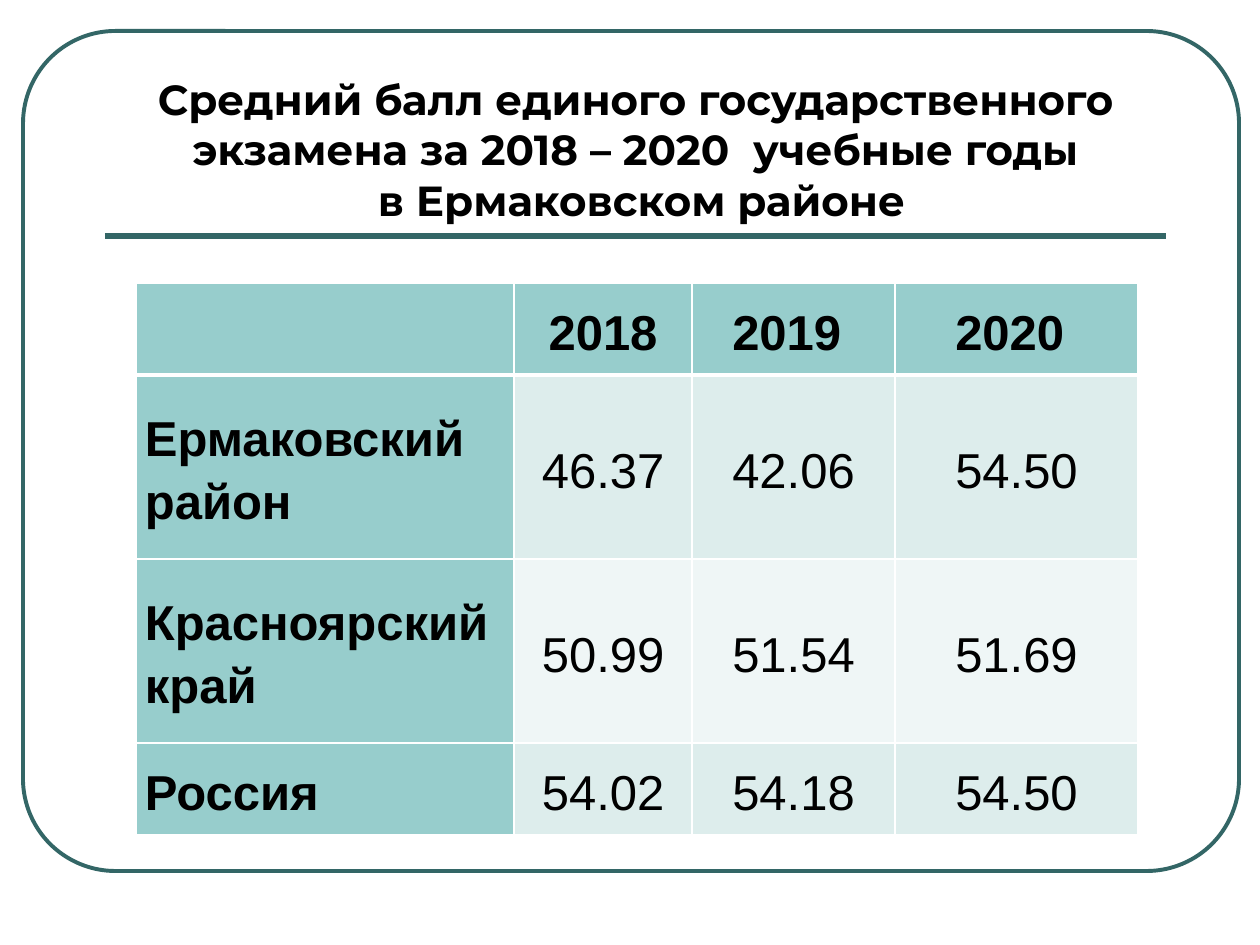
from dataclasses import dataclass

from lxml.etree import SubElement
from pptx import Presentation
from pptx.dml.color import RGBColor
from pptx.enum.shapes import MSO_CONNECTOR, MSO_SHAPE
from pptx.enum.text import MSO_ANCHOR, MSO_AUTO_SIZE, PP_ALIGN
from pptx.oxml.ns import qn
from pptx.util import Emu, Pt

EMU_PER_PX = 914400 / 126

BLACK = RGBColor(0x00, 0x00, 0x00)
WHITE = RGBColor(0xFF, 0xFF, 0xFF)
DARK_TEAL = RGBColor(0x33, 0x66, 0x66)
TEAL = RGBColor(0x97, 0xCD, 0xCC)
LIGHT_BAND = RGBColor(0xDD, 0xED, 0xEC)
PALE_BAND = RGBColor(0xEF, 0xF6, 0xF6)

TITLE = ("Средний балл единого государственного экзамена "
         "за 2018 – 2020  учебные годы\v в Ермаковском районе")
COL_WIDTHS = (378, 178, 203, 243)


@dataclass
class Row:
    label: str
    values: tuple[str, ...]
    height: int
    band: RGBColor
    bold: bool = False


ROWS = (
    Row("", ("2018", "2019 ", "2020 "), 92, TEAL, bold=True),
    Row("Ермаковский район", ("46.37", "42.06", "54.50"), 184, LIGHT_BAND),
    Row("Красноярский край", ("50.99", "51.54", "51.69"), 184, PALE_BAND),
    Row("Россия", ("54.02", "54.18", "54.50"), 92, LIGHT_BAND),
)


def px(n: int) -> Emu:
    return Emu(round(n * EMU_PER_PX))


def write(tf, text: str, *, size: int, font: str = "Arial", bold: bool = False,
          align=PP_ALIGN.CENTER, spacing: float = 1.0) -> None:
    tf.word_wrap = True
    tf.text = text
    p = tf.paragraphs[0]
    p.alignment = align
    p.line_spacing = spacing
    for r in p.runs:
        r.font.name = font
        r.font.size = Pt(size)
        r.font.bold = bold
        r.font.color.rgb = BLACK


def set_borders(cell, top: int, bottom: int) -> None:
    """Draw white borders; they must precede the cell fill in the XML."""
    tc_pr = cell._tc.get_or_add_tcPr()
    for side, width in (("L", 1), ("R", 1), ("T", top), ("B", bottom)):
        ln = SubElement(tc_pr, qn(f"a:ln{side}"), w=str(Pt(width)))
        fill = SubElement(ln, qn("a:solidFill"))
        SubElement(fill, qn("a:srgbClr"), val=str(WHITE))


def add_frame(slide) -> None:
    sp = slide.shapes.add_shape(MSO_SHAPE.ROUNDED_RECTANGLE,
                                px(23), px(31), px(1216), px(840))
    sp.adjustments[0] = 0.11
    sp.shadow.inherit = False
    sp.fill.background()
    sp.line.color.rgb = DARK_TEAL
    sp.line.width = Pt(2.25)


def add_rule(slide) -> None:
    line = slide.shapes.add_connector(MSO_CONNECTOR.STRAIGHT,
                                      px(105), px(236), px(1166), px(236))
    line.line.color.rgb = DARK_TEAL
    line.line.width = Pt(3)
    SubElement(line._element.spPr, qn("a:effectLst"))


def add_title(slide) -> None:
    title = slide.shapes.title
    title.left, title.top, title.width, title.height = (
        px(105), px(73), px(1061), px(158))
    tf = title.text_frame
    tf.auto_size = MSO_AUTO_SIZE.NONE
    tf.vertical_anchor = MSO_ANCHOR.BOTTOM
    write(tf, TITLE, size=24, font="Montserrat", bold=True)


def add_scores(slide) -> None:
    table = slide.shapes.add_table(
        len(ROWS), len(COL_WIDTHS), px(136), px(283),
        px(sum(COL_WIDTHS)), px(sum(row.height for row in ROWS))).table
    for col, width in zip(table.columns, COL_WIDTHS):
        col.width = px(width)
    for i, row in enumerate(ROWS):
        table.rows[i].height = px(row.height)
        for j, text in enumerate((row.label, *row.values)):
            is_label = j == 0
            cell = table.cell(i, j)
            set_borders(cell, top=3 if i == 1 else 1, bottom=3 if i == 0 else 1)
            cell.fill.solid()
            cell.fill.fore_color.rgb = TEAL if is_label else row.band
            cell.vertical_anchor = MSO_ANCHOR.MIDDLE
            cell.margin_left = cell.margin_right = px(9)
            cell.margin_top = cell.margin_bottom = 0
            write(cell.text_frame, text, size=28, bold=is_label or row.bold,
                  align=PP_ALIGN.LEFT if is_label else PP_ALIGN.CENTER,
                  spacing=1.15)


def main() -> None:
    prs = Presentation()
    prs.slide_width, prs.slide_height = px(1260), px(945)
    slide = prs.slides.add_slide(prs.slide_layouts[5])
    add_frame(slide)
    add_rule(slide)
    add_title(slide)
    add_scores(slide)
    prs.save("out.pptx")


if __name__ == "__main__":
    main()
